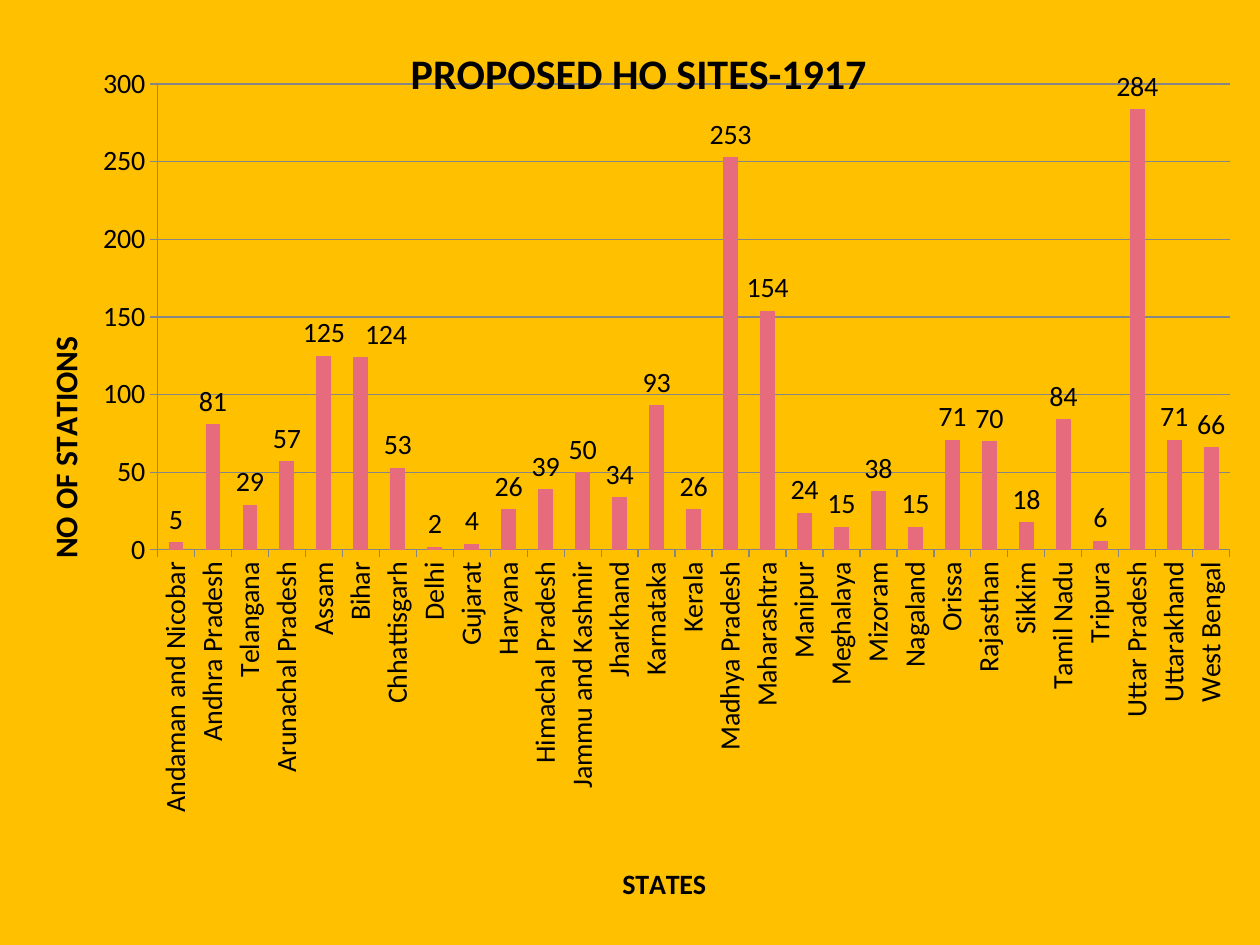
"""Builds a one-slide deck charting the proposed HO sites by state."""
from pptx import Presentation
from pptx.chart.data import CategoryChartData
from pptx.dml.color import RGBColor
from pptx.enum.chart import XL_CHART_TYPE, XL_LABEL_POSITION, XL_TICK_MARK
from pptx.oxml import parse_xml
from pptx.oxml.ns import nsdecls, qn
from pptx.util import Inches, Pt

AMBER = RGBColor(0xFF, 0xC0, 0x00)
ROSE = RGBColor(0xE6, 0x6C, 0x7D)
GREY = RGBColor(0x86, 0x86, 0x86)
BLACK = RGBColor(0x00, 0x00, 0x00)

STATIONS = {
    "Andaman and Nicobar": 5, "Andhra Pradesh": 81, "Telangana": 29,
    "Arunachal Pradesh": 57, "Assam": 125, "Bihar": 124, "Chhattisgarh": 53,
    "Delhi": 2, "Gujarat": 4, "Haryana": 26, "Himachal Pradesh": 39,
    "Jammu and Kashmir": 50, "Jharkhand": 34, "Karnataka": 93, "Kerala": 26,
    "Madhya Pradesh": 253, "Maharashtra": 154, "Manipur": 24, "Meghalaya": 15,
    "Mizoram": 38, "Nagaland": 15, "Orissa": 71, "Rajasthan": 70, "Sikkim": 18,
    "Tamil Nadu": 84, "Tripura": 6, "Uttar Pradesh": 284, "Uttarakhand": 71,
    "West Bengal": 66,
}


def style_font(font, size, bold=False):
    font.name = "Calibri"
    font.size = Pt(size)
    font.bold = bold
    font.color.rgb = BLACK


def write_text(frame, text, size=16, bold=False, rotation=0):
    frame.text = text
    style_font(frame.paragraphs[0].runs[0].font, size, bold)
    body = frame._txBody.find(qn("a:bodyPr"))
    body.set("rot", str(rotation * 60000))
    body.set("vert", "horz")


def place(element, index, target="", **shares):
    old = element.find(qn("c:layout"))
    if old is not None:
        element.remove(old)
    parts = f'<c:layoutTarget val="{target}"/>' if target else ""
    if "mode" in shares:
        mode = shares.pop("mode")
        parts += "".join(f'<c:{axis}Mode val="{mode}"/>' for axis in "xy")
    parts += "".join(f'<c:{key} val="{share}"/>' for key, share in shares.items())
    element.insert(index, parse_xml(
        f'<c:layout {nsdecls("c")}><c:manualLayout>{parts}</c:manualLayout></c:layout>'))


class ChartSlide:
    """Holds the deck, the current slide and the chart's style."""

    def __init__(self, width=10, height=7.5):
        self.deck = Presentation()
        self.deck.slide_width = Inches(width)
        self.deck.slide_height = Inches(height)
        self.slide = self.deck.slides.add_slide(self.deck.slide_layouts[6])

    def add_columns(self, values):
        sites = CategoryChartData()
        sites.categories = list(values)
        sites.add_series("Series 1", list(values.values()))
        self.chart = self.slide.shapes.add_chart(
            XL_CHART_TYPE.COLUMN_CLUSTERED, 0, 0,
            self.deck.slide_width, self.deck.slide_height, sites).chart
        self.chart.has_legend = False
        style_font(self.chart.font, 10)
        self.chart._chartSpace.find(qn("c:chart")).addnext(parse_xml(
            f'<c:spPr {nsdecls("c", "a")}><a:solidFill><a:srgbClr val="{AMBER}"/>'
            '</a:solidFill><a:ln><a:noFill/></a:ln></c:spPr>'))
        place(self.chart._chartSpace.find(f'{qn("c:chart")}/{qn("c:plotArea")}'), 0,
              "inner", mode="edge", x=0.125, y=0.089, w=0.851, h=0.493)
        columns = self.chart.plots[0]
        columns.gap_width = 150
        columns.vary_by_categories = False
        fill = columns.series[0].format.fill
        fill.solid()
        fill.fore_color.rgb = ROSE

    def add_title(self, owner, text, x, y, **text_format):
        write_text(owner.text_frame, text, bold=True, **text_format)
        place(owner._element, 1, mode="edge", x=x, y=y)

    def add_axis(self, axis, text, x, y, **text_format):
        axis.has_title = True
        self.add_title(axis.axis_title, text, x, y, **text_format)
        axis.major_tick_mark = XL_TICK_MARK.OUTSIDE
        axis.minor_tick_mark = XL_TICK_MARK.NONE
        style_font(axis.tick_labels.font, 16)
        axis.format.line.color.rgb = GREY
        axis.format.line.width = Pt(0.75)

    def add_labels(self, shifted, shift):
        series = self.chart.plots[0].series[0]
        labels = series.data_labels
        labels.show_value = True
        labels.position = XL_LABEL_POSITION.OUTSIDE_END
        style_font(labels.font, 16)
        moved = series.points[shifted].data_label
        style_font(moved.font, 16)
        moved.position = XL_LABEL_POSITION.OUTSIDE_END
        place(labels._element.find(qn("c:dLbl")), 1, x=shift, y=0)


def main():
    page = ChartSlide()
    page.add_columns(STATIONS)
    chart = page.chart
    chart.has_title = True
    page.add_title(chart.chart_title, "PROPOSED HO SITES-1917", 0.32, 0.04, size=24)
    chart.chart_title._element.find(qn("c:overlay")).set("val", "1")

    states, stations = chart.category_axis, chart.value_axis
    page.add_axis(states, "STATES", 0.49, 0.91)
    states._element.find(f'{qn("c:txPr")}/{qn("a:bodyPr")}').set("rot", "-5400000")
    page.add_axis(stations, "NO OF STATIONS", 0.03, 0.35, size=18, rotation=-90)
    stations.minimum_scale, stations.maximum_scale = 0, 300
    stations.major_unit = 50
    stations.has_major_gridlines = True
    stations.major_gridlines.format.line.color.rgb = GREY

    page.add_labels(list(STATIONS).index("Bihar"), 0.02)
    page.deck.save("out.pptx")


if __name__ == "__main__":
    main()
